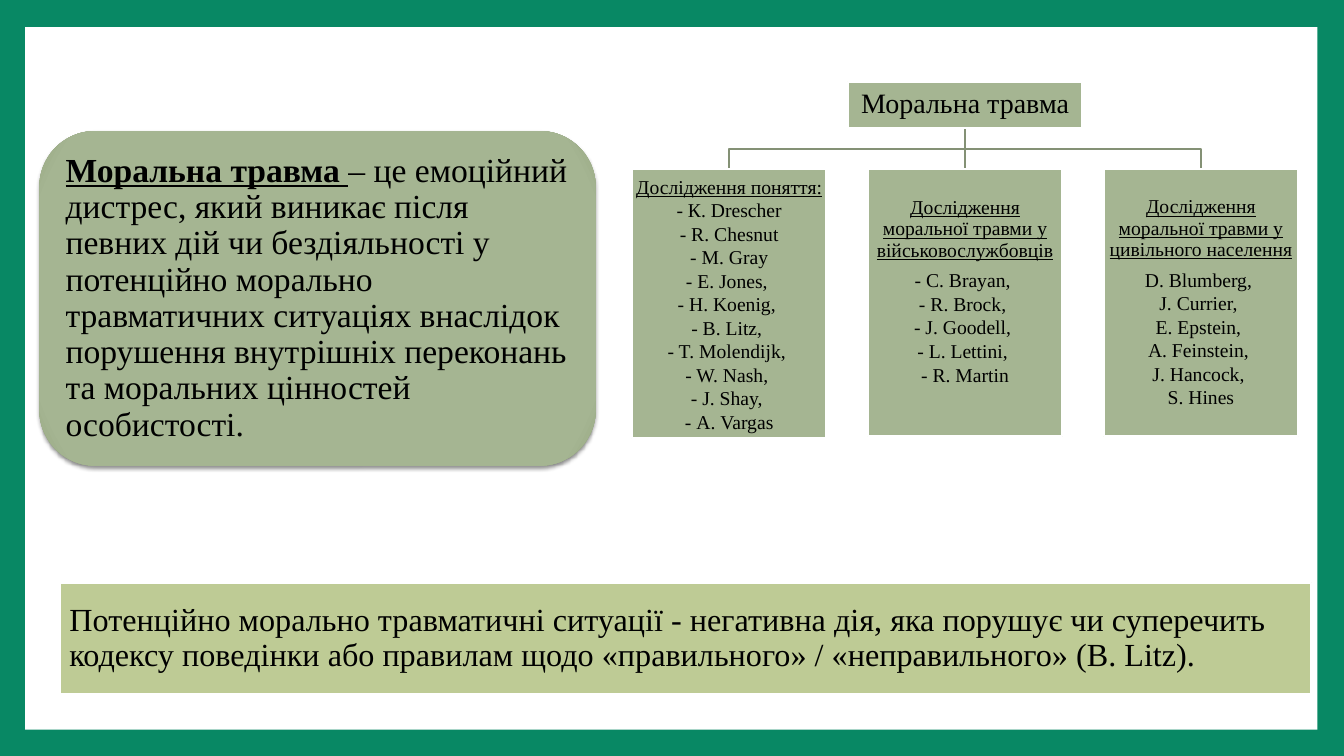
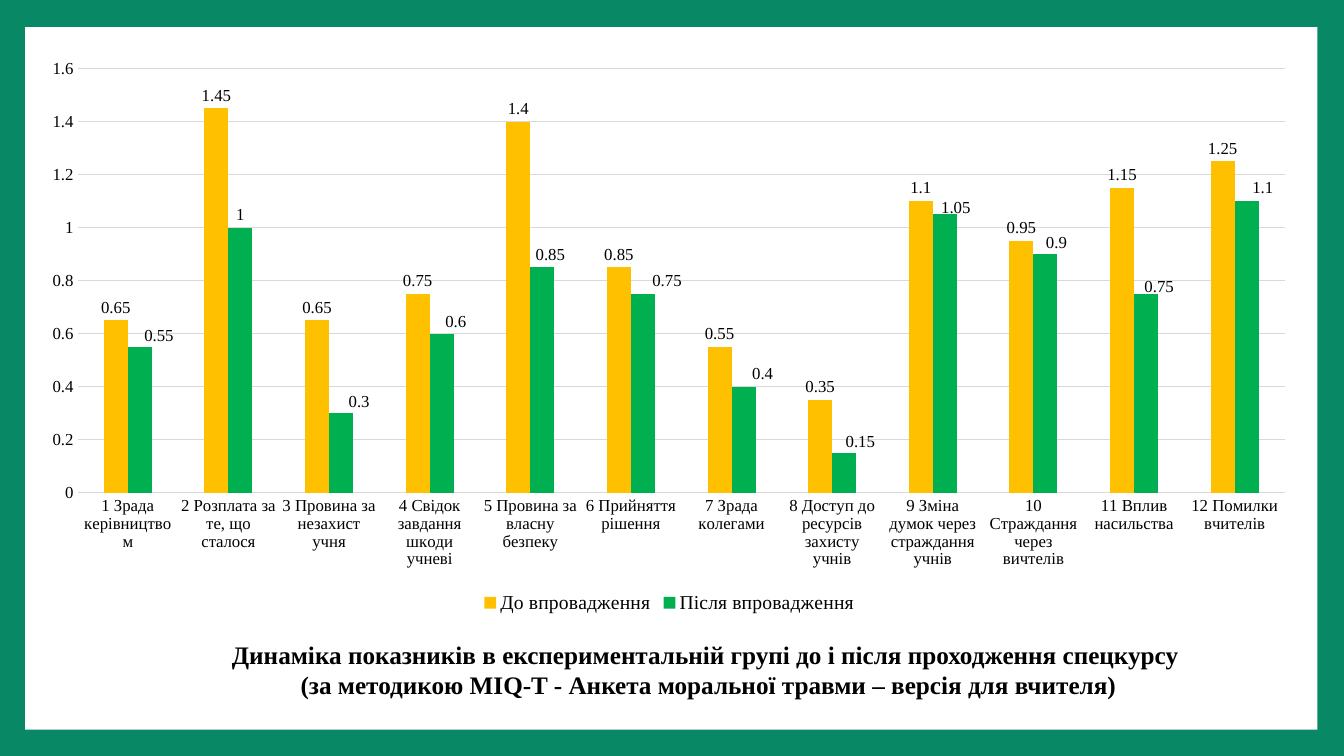
"""Build two slides on moral injury: a concept map and a before/after chart."""
from dataclasses import dataclass

from lxml.etree import SubElement
from pptx import Presentation
from pptx.chart.data import CategoryChartData
from pptx.dml.color import RGBColor
from pptx.enum.chart import XL_CHART_TYPE, XL_LABEL_POSITION, XL_LEGEND_POSITION, XL_TICK_MARK
from pptx.enum.shapes import MSO_CONNECTOR, MSO_SHAPE
from pptx.enum.text import MSO_ANCHOR, PP_ALIGN
from pptx.oxml import parse_xml
from pptx.oxml.ns import qn
from pptx.util import Inches, Pt


@dataclass(frozen=True)
class Theme:
    font: str = "Times New Roman"
    frame: str = "088864"
    paper: str = "FFFFFF"
    ink: str = "000000"
    sage: str = "A5B592"
    sage_dark: str = "96A781"
    lime: str = "BECB95"
    branch: str = "849175"
    grid: str = "D9D9D9"
    before: str = "FFC000"
    after: str = "00B050"
    definition: int = 24
    situation: int = 23
    root: int = 20
    caption: int = 18
    card: int = 14
    legend: int = 14
    chart: int = 12
    line: float = 1.5
    hairline: float = 0.75


THEME = Theme()

TERM = "Моральна травма "
DEFINITION = (
    "– це емоційний дистрес, який виникає після певних дій чи бездіяльності у потенційно морально "
    "травматичних ситуаціях внаслідок порушення внутрішніх переконань та моральних цінностей особистості."
)
SITUATION = (
    "Потенційно морально травматичні ситуації - негативна дія, яка порушує чи суперечить кодексу "
    "поведінки або правилам щодо «правильного» / «неправильного» (B. Litz)."
)
ROOT = "Моральна травма"
CARDS = [
    {
        "heading": "Дослідження поняття:",
        "names": ["- К. Drescher", "- R. Chesnut", "- М. Gray", "- E. Jones, ", "- H. Koenig, ", "- B. Litz, ",
                  "- T. Molendijk, ", "- W. Nash, ", "- J. Shay, ", "- А. Vargas"],
        "height": 2.67, "heading_spacing": 1.0, "heading_after": 0, "bottom": 0.01,
    },
    {
        "heading": "Дослідження моральної травми у військовослужбовців",
        "names": ["- C. Brayan, ", "- R. Brock, ", "- J. Goodell, ", "- L. Lettini, ", "- R. Martin"],
        "height": 2.65, "heading_spacing": 0.9, "heading_after": 5, "bottom": 0.23,
    },
    {
        "heading": "Дослідження моральної травми у цивільного населення",
        "names": ["D. Blumberg, ", "J. Currier, ", "E. Epstein, ", "А. Feinstein, ", "J. Hancock, ", "S. Hines"],
        "height": 2.65, "heading_spacing": 0.9, "heading_after": 5, "bottom": 0.01,
    },
]
CAPTION = [
    "Динаміка показників в експериментальній групі до і після проходження спецкурсу ",
    "(за методикою MIQ-T - Анкета моральної травми – версія для вчителя)",
]
SERIES = [("До впровадження", THEME.before), ("Після впровадження", THEME.after)]
SCORES = [
    ("1 Зрада керівництвом", 0.65, 0.55),
    ("2 Розплата за те, що сталося", 1.45, 1),
    ("3 Провина за незахист учня", 0.65, 0.3),
    ("4 Свідок завдання шкоди учневі", 0.75, 0.6),
    ("5 Провина за власну безпеку", 1.4, 0.85),
    ("6 Прийняття рішення", 0.85, 0.75),
    ("7 Зрада колегами", 0.55, 0.4),
    ("8 Доступ до ресурсів захисту учнів", 0.35, 0.15),
    ("9 Зміна думок через страждання учнів", 1.1, 1.05),
    ("10 Страждання через вичтелів", 0.95, 0.9),
    ("11 Вплив насильства", 1.15, 0.75),
    ("12 Помилки вчителів", 1.25, 1.1),
]
LABEL_SHIFTS = {
    0: (0.19, 0.02), 2: (0.18, 0.01), 3: (0.14, 0.01), 4: (0.08, 0), 5: (0.24, 0), 6: (0.19, 0),
    7: (0.16, 0.02), 8: (0.11, 0.06), 9: (0.11, 0.02), 10: (0.13, 0.06), 11: (0.16, 0),
}

CHART_BOX = (0.27, 0.48, 12.74, 5.65)
PLOT_BOX = (0.5, 0.2, 11.98, 4.21)
CARD_LEFT, CARD_TOP, CARD_WIDTH, CARD_STEP = 6.27, 1.68, 1.93, 2.34
ROOT_TOP, ROOT_WIDTH, ROOT_HEIGHT = 0.81, 2.33, 0.46


def color(code):
    return RGBColor.from_string(code)


def style_font(font, size, bold=False, underline=False):
    font.name, font.size = THEME.font, Pt(size)
    font.bold, font.underline = bold, underline
    font.color.rgb = color(THEME.ink)


def write(shape, paragraphs, size, align=PP_ALIGN.LEFT, inset=0.1, bold=False, spacing=1.0):
    frame = shape.text_frame
    frame.word_wrap = True
    frame.vertical_anchor = MSO_ANCHOR.MIDDLE
    frame.margin_left = frame.margin_right = frame.margin_top = frame.margin_bottom = Inches(inset)
    frame.text = "\n".join(paragraphs)
    for paragraph in frame.paragraphs:
        paragraph.alignment = align
        paragraph.line_spacing = spacing
        for run in paragraph.runs:
            style_font(run.font, size, bold)
    return frame


def add_box(slide, box, fill, outline=None, preset=MSO_SHAPE.RECTANGLE):
    shape = slide.shapes.add_shape(preset, *map(Inches, box))
    shape.shadow.inherit = False
    shape.fill.solid()
    shape.fill.fore_color.rgb = color(fill)
    if outline:
        shape.line.color.rgb = color(outline)
        shape.line.width = Pt(THEME.line)
    else:
        shape.line.fill.background()
    return shape


def add_branch(slide, start, end):
    (left, top), (right, bottom) = start, end
    if left == right:
        branch = slide.shapes.add_connector(MSO_CONNECTOR.STRAIGHT, *map(Inches, (*start, *end)))
        SubElement(branch.element.spPr, qn("a:effectLst"))
    else:
        bus = (top + bottom) / 2
        builder = slide.shapes.build_freeform(Inches(left), Inches(top))
        corners = [(left, bus), (right, bus), end]
        builder.add_line_segments([(Inches(x), Inches(y)) for x, y in corners], close=False)
        branch = builder.convert_to_shape()
        branch.shadow.inherit = False
        branch.fill.background()
    branch.line.color.rgb = color(THEME.branch)
    branch.line.width = Pt(THEME.line)


def add_frame(presentation, layout, slide):
    background = presentation.slide_master.background.fill
    background.solid()
    background.fore_color.rgb = color(THEME.frame)
    panel = add_box(slide, (0.25, 0.27, 12.82, 6.97), THEME.paper)
    layout.shapes.element.append(panel.element)


def add_glow(shape):
    properties = shape.element.spPr
    namespace = 'xmlns:a="http://schemas.openxmlformats.org/drawingml/2006/main"'
    stops = "".join(
        f'<a:gs pos="{place}"><a:srgbClr val="{code}"/></a:gs>'
        for place, code in ((0, THEME.sage), (90000, THEME.sage), (100000, THEME.sage_dark))
    )
    gradient = parse_xml(
        f'<a:gradFill {namespace}><a:gsLst>{stops}</a:gsLst><a:path path="circle">'
        '<a:fillToRect l="100000" t="100000" r="100000" b="100000"/></a:path></a:gradFill>'
    )
    properties.replace(properties.find(qn("a:solidFill")), gradient)
    shadow = parse_xml(
        f'<a:outerShdw {namespace} blurRad="{Pt(3)}" dist="{Pt(2)}" dir="5400000">'
        f'<a:srgbClr val="{THEME.ink}"><a:alpha val="45000"/></a:srgbClr></a:outerShdw>'
    )
    properties.find(qn("a:effectLst")).append(shadow)


def add_tree(slide):
    centers = [CARD_LEFT + CARD_WIDTH / 2 + index * CARD_STEP for index in range(len(CARDS))]
    middle = centers[len(centers) // 2]
    for center in reversed(centers):
        add_branch(slide, (middle, ROOT_TOP + ROOT_HEIGHT), (center, CARD_TOP))

    root = add_box(slide, (middle - ROOT_WIDTH / 2, ROOT_TOP, ROOT_WIDTH, ROOT_HEIGHT), THEME.sage, THEME.paper)
    write(root, [ROOT], THEME.root, PP_ALIGN.CENTER, 0.01, spacing=0.9)
    for center, card in zip(centers, CARDS):
        box = (center - CARD_WIDTH / 2, CARD_TOP, CARD_WIDTH, card["height"])
        shape = add_box(slide, box, THEME.sage, THEME.paper)
        frame = write(shape, [card["heading"], *card["names"]], THEME.card, PP_ALIGN.CENTER, 0.01)
        frame.margin_bottom = Inches(card["bottom"])
        heading = frame.paragraphs[0]
        heading.line_spacing = card["heading_spacing"]
        heading.space_after = Pt(card["heading_after"])
        heading.runs[0].font.underline = True


def build_concept(slide):
    add_tree(slide)
    definition = add_box(slide, (0.39, 1.3, 5.52, 3.32), THEME.sage, preset=MSO_SHAPE.ROUNDED_RECTANGLE)
    add_glow(definition)
    paragraph = write(definition, [TERM], THEME.definition, spacing=0.9).paragraphs[0]
    style_font(paragraph.runs[0].font, THEME.definition, bold=True, underline=True)
    explanation = paragraph.add_run()
    explanation.text = DEFINITION
    style_font(explanation.font, THEME.definition)
    situation = add_box(slide, (0.59, 5.78, 12.42, 1.11), THEME.lime, THEME.paper)
    write(situation, [SITUATION], THEME.situation, spacing=0.9)


def set_layout(element, index, target=None, **places):
    for existing in element.findall(qn("c:layout")):
        element.remove(existing)
    layout = element.makeelement(qn("c:layout"))
    element.insert(index, layout)
    manual = SubElement(layout, qn("c:manualLayout"))
    if target:
        SubElement(manual, qn("c:layoutTarget")).set("val", target)
        for mode in ("xMode", "yMode"):
            SubElement(manual, qn(f"c:{mode}")).set("val", "edge")
    for name, value in places.items():
        extent = CHART_BOX[2] if name in "xw" else CHART_BOX[3]
        SubElement(manual, qn(f"c:{name}")).set("val", f"{value / extent:.4f}")


def style_axes(chart):
    category_axis, value_axis = chart.category_axis, chart.value_axis
    for axis in (category_axis, value_axis):
        axis.major_tick_mark = axis.minor_tick_mark = XL_TICK_MARK.NONE
        style_font(axis.tick_labels.font, THEME.chart)
    value_axis.format.line.fill.background()
    value_axis.minimum_scale, value_axis.maximum_scale, value_axis.major_unit = 0, 1.6, 0.2
    for line in (category_axis.format.line, value_axis.major_gridlines.format.line):
        line.color.rgb = color(THEME.grid)
        line.width = Pt(THEME.hairline)


def style_series(chart):
    plot = chart.plots[0]
    plot.gap_width, plot.overlap, plot.vary_by_categories = 219, 0, False
    for series, (_, fill) in zip(plot.series, SERIES):
        series.format.fill.solid()
        series.format.fill.fore_color.rgb = color(fill)
        labels = series.data_labels
        labels.show_value = True
        labels.position = XL_LABEL_POSITION.OUTSIDE_END
        style_font(labels.font, THEME.chart)
    for index in LABEL_SHIFTS:
        label = plot.series[1].points[index].data_label
        label.position = XL_LABEL_POSITION.OUTSIDE_END
        style_font(label.font, THEME.chart)
    for element, (right, down) in zip(chart.element.xpath(".//c:dLbl"), LABEL_SHIFTS.values()):
        set_layout(element, 1, x=right, y=down)


def build_results(slide):
    data = CategoryChartData()
    data.categories = [row[0] for row in SCORES]
    for column, (name, _) in enumerate(SERIES, 1):
        data.add_series(name, [row[column] for row in SCORES])
    chart = slide.shapes.add_chart(XL_CHART_TYPE.COLUMN_CLUSTERED, *map(Inches, CHART_BOX), data).chart
    chart.has_title = False
    style_font(chart.font, THEME.chart)
    chart.has_legend = True
    chart.legend.position = XL_LEGEND_POSITION.BOTTOM
    chart.legend.include_in_layout = False
    style_font(chart.legend.font, THEME.legend)
    style_axes(chart)
    style_series(chart)
    set_layout(chart.element.xpath(".//c:plotArea")[0], 0, "inner", **dict(zip("xywh", PLOT_BOX)))

    caption = slide.shapes.add_textbox(*map(Inches, (0.91, 6.29, 12.24, 0.71)))
    frame = write(caption, CAPTION, THEME.caption, PP_ALIGN.CENTER, 0.05, bold=True)
    frame.vertical_anchor = MSO_ANCHOR.TOP


def main():
    presentation = Presentation()
    presentation.slide_width, presentation.slide_height = Inches(40 / 3), Inches(7.5)
    layout = presentation.slide_layouts[6]
    slides = [presentation.slides.add_slide(layout) for _ in range(2)]
    add_frame(presentation, layout, slides[0])
    build_concept(slides[0])
    build_results(slides[1])
    presentation.save("out.pptx")


if __name__ == "__main__":
    main()
